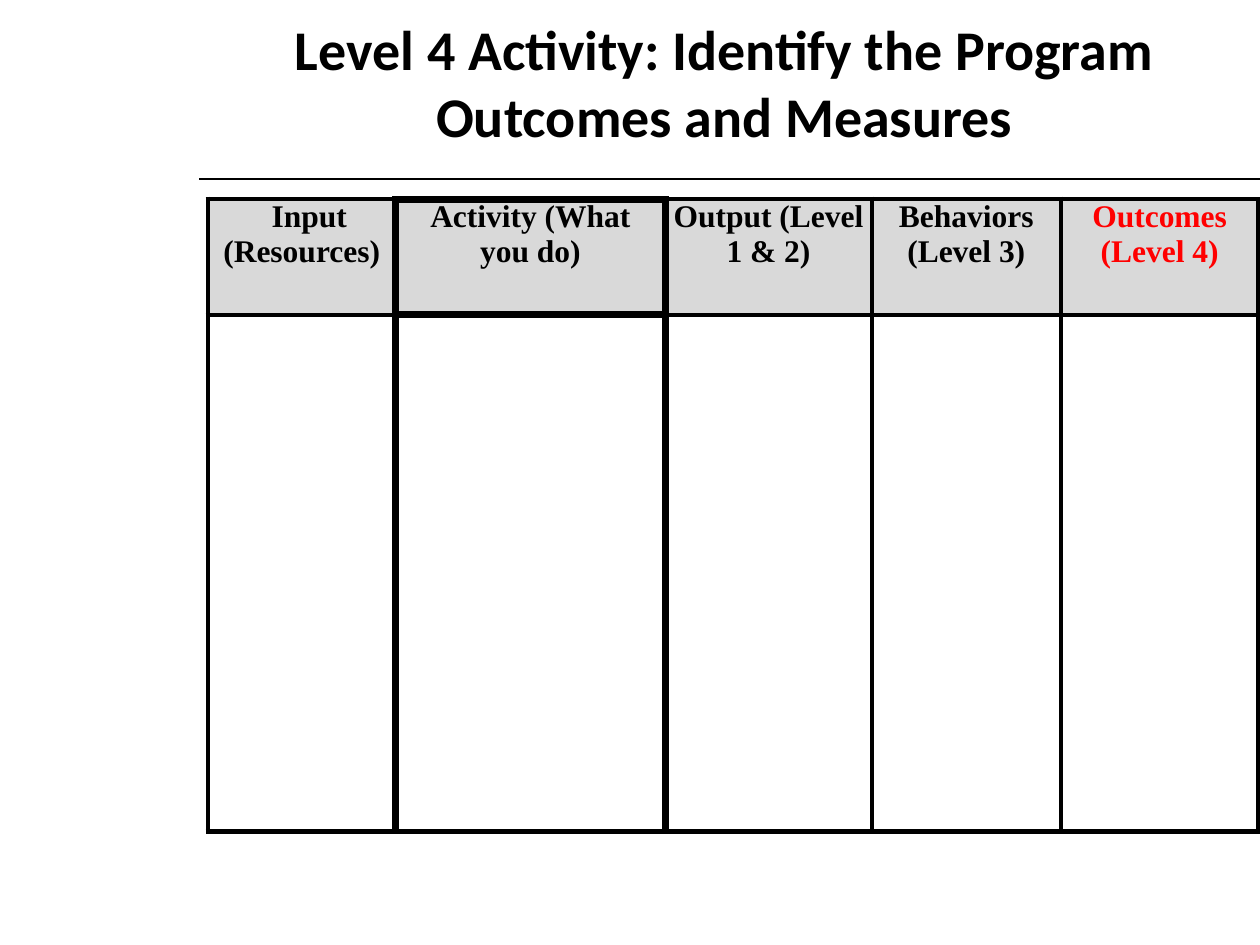
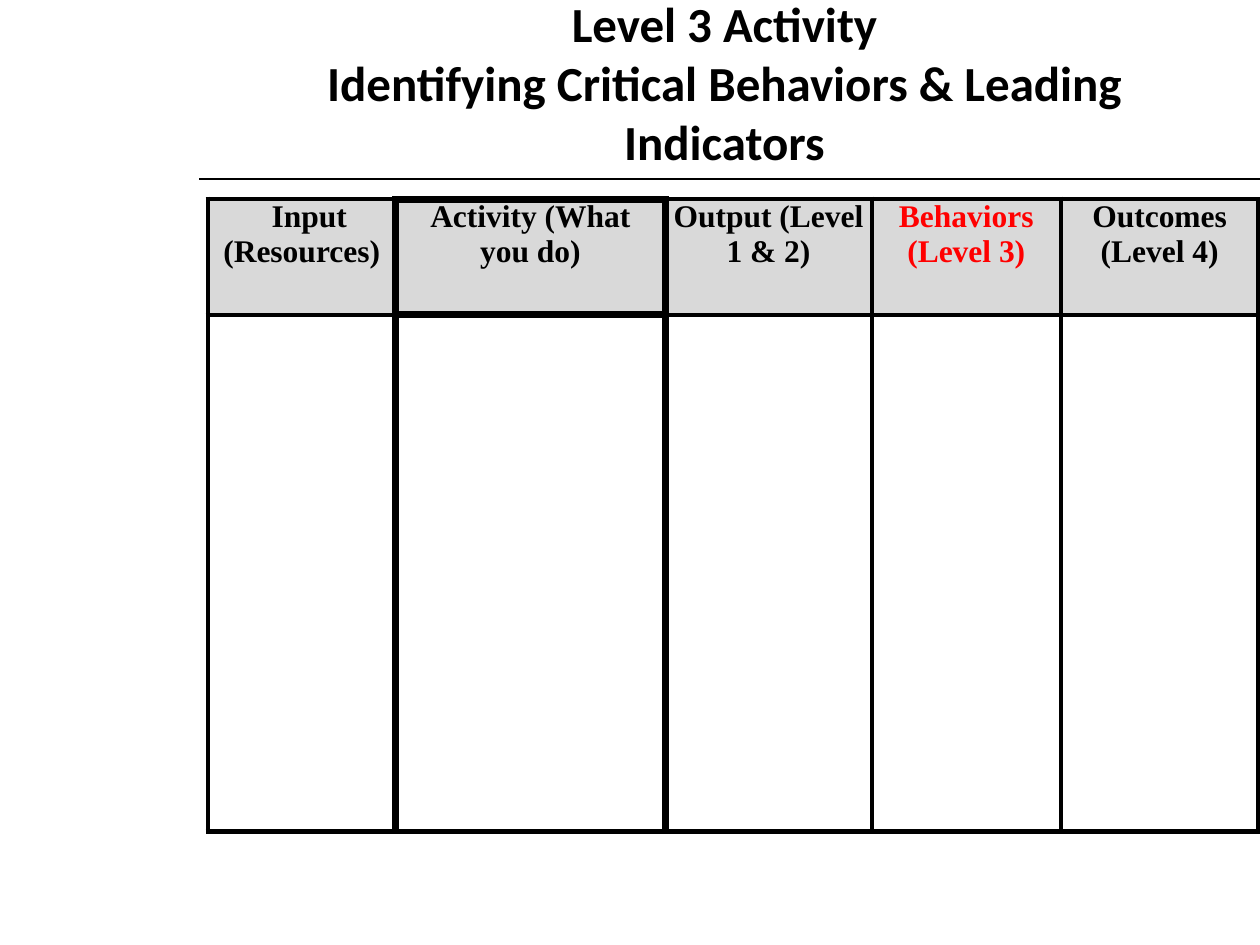
from lxml import etree
from pptx import Presentation
from pptx.dml.color import RGBColor
from pptx.enum.shapes import MSO_CONNECTOR
from pptx.enum.text import MSO_ANCHOR, MSO_AUTO_SIZE, PP_ALIGN
from pptx.oxml.ns import qn
from pptx.util import Pt

PX = 9144
STRAIGHT = MSO_CONNECTOR.STRAIGHT
MIDDLE, TOP = MSO_ANCHOR.MIDDLE, MSO_ANCHOR.TOP
CENTER = PP_ALIGN.CENTER
FIXED = MSO_AUTO_SIZE.NONE

COLORS = {"ink": "000000", "mark": "FF0000", "head": "D9D9D9"}
HEADS = ["Input (Resources)", "Activity (What you do)", "Output (Level 1 & 2)",
         "Behaviors (Level 3)", "Outcomes (Level 4)"]
WIDTHS = [149, 214, 164, 150, 157]
HEIGHTS = [92, 410]
THICK = {(0, 0): "R", (0, 1): "LRTB", (0, 2): "L",
         (1, 0): "R", (1, 1): "LRT", (1, 2): "L"}
SLIDES = [
    (["Level 4 Activity: Identify the Program Outcomes and Measures"], 32, 4),
    (["Level 3 Activity", "Identifying Critical Behaviors & Leading Indicators"], 28, 3),
]


def write(frame, lines, font, size, color="ink", indent=0):
    for i, line in enumerate(lines):
        para = frame.paragraphs[0] if i == 0 else frame.add_paragraph()
        para.alignment = CENTER
        para.space_before = Pt(0)
        if indent:
            para._p.get_or_add_pPr().set("indent", str(indent * PX))
        run = para.add_run()
        run.text = line
        run.font.name = font
        run.font.size = Pt(size)
        run.font.bold = True
        run.font.color.rgb = RGBColor.from_string(COLORS[color])


def border(cell, side, width):
    edge = etree.SubElement(cell._tc.get_or_add_tcPr(), qn("a:ln" + side),
                            w=str(Pt(width)), cmpd="sng")
    fill = etree.SubElement(edge, qn("a:solidFill"))
    etree.SubElement(fill, qn("a:srgbClr"), val=COLORS["ink"])
    etree.SubElement(edge, qn("a:prstDash"), val="solid")


deck = Presentation()
deck.slide_width = 1000 * PX
deck.slide_height = 750 * PX

for lines, size, mark in SLIDES:
    slide = deck.slides.add_slide(deck.slide_layouts[5])

    rule = slide.shapes.add_connector(STRAIGHT, 158 * PX, 142 * PX, 1000 * PX, 142 * PX)
    rule.line.color.rgb = RGBColor.from_string(COLORS["ink"])
    rule.line.width = Pt(0.75)
    etree.SubElement(rule._element.spPr, qn("a:effectLst"))

    title = slide.shapes.title
    title.left, title.top = 175 * PX, 0
    title.width, title.height = 800 * PX, 130 * PX
    frame = title.text_frame
    frame.word_wrap = True
    frame.auto_size = FIXED
    frame.vertical_anchor = MIDDLE
    write(frame, lines, font="Calibri", size=size)

    table = slide.shapes.add_table(len(HEIGHTS), len(WIDTHS), 165 * PX, 158 * PX,
                                   sum(WIDTHS) * PX, sum(HEIGHTS) * PX).table
    table.first_row = False
    table.horz_banding = False
    for col, width in enumerate(WIDTHS):
        table.columns[col].width = width * PX
    for row, height in enumerate(HEIGHTS):
        table.rows[row].height = height * PX
        for col in range(len(WIDTHS)):
            cell = table.cell(row, col)
            cell.margin_left = cell.margin_right = 6 * PX
            cell.margin_top = cell.margin_bottom = 0
            cell.vertical_anchor = TOP
            for side in "LRTB":
                border(cell, side, 4.5 if side in THICK.get((row, col), "") else 3)
            if row:
                cell.fill.background()
                continue
            cell.fill.solid()
            cell.fill.fore_color.rgb = RGBColor.from_string(COLORS["head"])
            write(cell.text_frame, [HEADS[col]], font="Times New Roman", size=18,
                  color="mark" if col == mark else "ink", indent=0 if col else 12)

deck.save("out.pptx")
